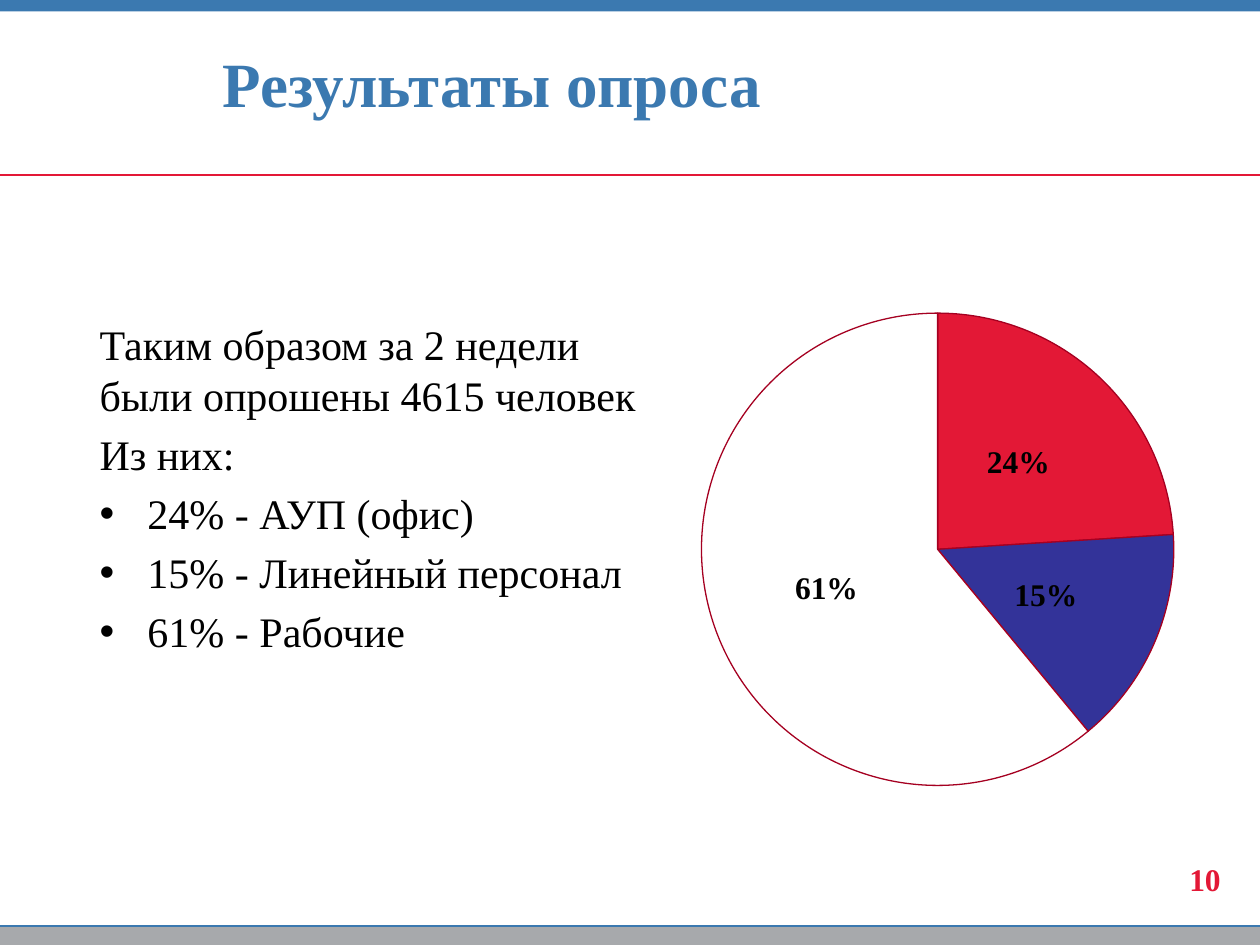
from lxml import etree
from pptx import Presentation
from pptx.chart.data import CategoryChartData
from pptx.dml.color import RGBColor
from pptx.enum import chart as charts, shapes, text as texts
from pptx.oxml import parse_xml
from pptx.oxml.ns import nsdecls, qn
from pptx.util import Inches, Pt

TITLE = "Результаты опроса"
PAGE = "10"
BODY = [
    ("Таким образом за 2 недели были опрошены 4615 человек", False),
    ("Из них:", False),
    ("24% - АУП (офис)", True),
    ("15% - Линейный персонал", True),
    ("61% - Рабочие", True),
]
SHARES = [
    ("АУП", 24, "red"),
    ("Линейный персонал", 15, "navy"),
    ("Рабочие", 61, "white"),
]
BARS = [(0, 0.09, "blue"), (7.35, 0.15, "gray")]
RULES = [(1.39, "red", 1), (7.35, "blue", 1.5)]
PIE = (5.43, 1.82, 4.02, 5.08)
DIAM = 3.75


class Theme:
    font = "Times New Roman"
    title, body, small = 36, 24, 18
    hues = dict(blue="3B79B0", red="E31836", gray="A7A9AC", navy="333399",
                white="FFFFFF", black="000000", wine="A50021")


def hue(name):
    return RGBColor.from_string(Theme.hues[name])


def style(font, size, color, bold=False):
    font.name, font.size, font.bold = Theme.font, Pt(size), bold
    font.color.rgb = hue(color)


def write(slide, lines, box, size, color, bold=False, inset=0,
          anchor=texts.MSO_ANCHOR.TOP, gap=0, lead=None):
    frame = slide.shapes.add_textbox(*map(Inches, box)).text_frame
    frame.word_wrap = True
    frame.vertical_anchor = anchor
    frame.margin_left = frame.margin_right = Inches(inset)
    for i, (line, bullet) in enumerate(lines):
        para = frame.paragraphs[0] if i == 0 else frame.add_paragraph()
        if bullet:
            props = para._p.get_or_add_pPr()
            props.set("marL", str(Inches(0.38)))
            props.set("indent", str(Inches(-0.38)))
            etree.SubElement(props, qn("a:buFont")).set("typeface", "Arial")
            etree.SubElement(props, qn("a:buChar")).set("char", "•")
        if i:
            para.space_before = Pt(gap)
        if lead:
            para.line_spacing = lead
        run = para.add_run()
        run.text = line
        style(run.font, size, color, bold)


def frame_page(slide):
    for top, high, color in BARS:
        bar = slide.shapes.add_shape(shapes.MSO_SHAPE.RECTANGLE, 0, Inches(top),
                                     Inches(10), Inches(high))
        bar.shadow.inherit = False
        bar.fill.solid()
        bar.fill.fore_color.rgb = hue(color)
        bar.line.fill.background()
    for top, color, width in RULES:
        rule = slide.shapes.add_connector(shapes.MSO_CONNECTOR.STRAIGHT, 0,
                                          Inches(top), Inches(10), Inches(top))
        rule.line.color.rgb = hue(color)
        rule.line.width = Pt(width)
        etree.SubElement(rule._element.spPr, qn("a:effectLst"))


def draw_pie(slide):
    data = CategoryChartData()
    data.categories = [name for name, _, _ in SHARES]
    data.add_series("Series 1", [share for _, share, _ in SHARES])
    chart = slide.shapes.add_chart(charts.XL_CHART_TYPE.PIE,
                                   *map(Inches, PIE), data).chart
    chart.has_legend = chart.has_title = False
    style(chart.font, Theme.small, "blue")
    plot = chart.plots[0]
    plot.vary_by_categories = True
    for i, (_, _, color) in enumerate(SHARES):
        part = plot.series[0].points[i].format
        part.fill.solid()
        part.fill.fore_color.rgb = hue(color)
        part.line.color.rgb = hue("wine")
        part.line.width = Pt(0.75)
    plot.has_data_labels = True
    tags = plot.data_labels
    tags.show_percentage, tags.show_value = True, False
    tags.number_format, tags.number_format_is_linked = "0%", False
    tags.position = charts.XL_LABEL_POSITION.CENTER
    style(tags.font, Theme.small, "black", True)
    wide, high = DIAM / PIE[2], DIAM / PIE[3]
    sizes = dict(x=(1 - wide) / 2, y=(1 - high) / 2, w=wide, h=high)
    area = chart._chartSpace.chart.plotArea
    for old in area.findall(qn("c:layout")):
        area.remove(old)
    parts = "".join(f'<c:{key} val="{val:.3f}"/>' for key, val in sizes.items())
    area.insert(0, parse_xml(
        f'<c:layout {nsdecls("c")}><c:manualLayout><c:layoutTarget val="inner"/>'
        f'<c:xMode val="edge"/><c:yMode val="edge"/>{parts}'
        '</c:manualLayout></c:layout>'))


def main():
    deck = Presentation()
    deck.slide_width, deck.slide_height = Inches(10), Inches(7.5)
    slide = deck.slides.add_slide(deck.slide_layouts[6])
    frame_page(slide)
    write(slide, [(PAGE, False)], (9.34, 6.78, 0.55, 0.4), Theme.small, "red",
          bold=True, inset=0.1)
    write(slide, [(TITLE, False)], (1.77, 0.13, 7.13, 1.13), Theme.title, "blue",
          bold=True, anchor=texts.MSO_ANCHOR.MIDDLE, lead=0.9)
    write(slide, BODY, (0.79, 2.48, 4.49, 4.42), Theme.body, "black", gap=5)
    draw_pie(slide)
    deck.save("out.pptx")


if __name__ == "__main__":
    main()
